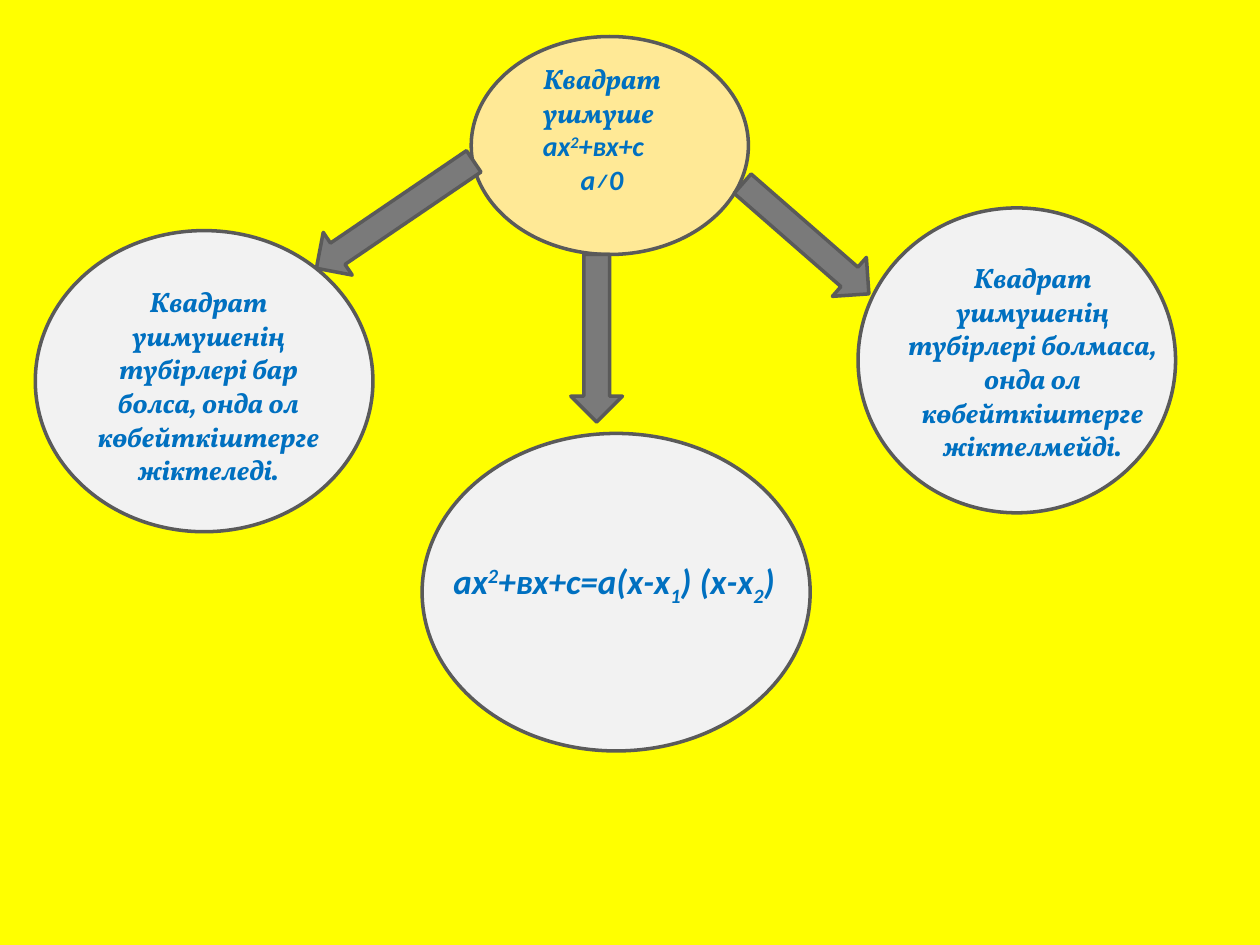
from dataclasses import dataclass

from pptx import Presentation, util as u
from pptx.dml.color import RGBColor
from pptx.enum import shapes, text


@dataclass(frozen=True)
class Theme:
    background: str = "FFFF00"
    topic: str = "FFE996"
    answer: str = "F2F2F2"
    arrow: str = "7A7A7A"
    outline: str = "5A5A5A"
    ink: str = "0070C0"
    words: str = "Vollkorn"
    formula: str = "Calibri"
    body: int = 16
    large: int = 20
    outline_width: int = 2


THEME = Theme()
OVAL = shapes.MSO_SHAPE.OVAL
ARROW = shapes.MSO_SHAPE.RIGHT_ARROW
SUP, SUB = 30, -25  # baseline shift in percent

# Diagram, back to front: kind, (left, top, width, height), fill, rotation
DIAGRAM = [
    (OVAL, (3.74, 0.29, 2.2, 1.73), THEME.topic, 0),
    (ARROW, (2.38, 1.5, 1.51, 0.41), THEME.arrow, 145.8),
    (OVAL, (0.28, 1.83, 2.68, 2.39), THEME.answer, 0),
    (OVAL, (6.81, 1.65, 2.52, 2.42), THEME.answer, 0),
    (ARROW, (5.73, 1.69, 1.33, 0.41), THEME.arrow, 41.1),
    (OVAL, (3.35, 3.44, 3.08, 2.52), THEME.answer, 0),
    (ARROW, (4.07, 2.48, 1.33, 0.41), THEME.arrow, 90),
]

# Labels: position, paragraphs of (font, runs, indent), format.
# A run is (wording, baseline shift).
LABELS = [
    ((4.21, 0.44, 1.34, 1.78), [
        (THEME.words, [("Квадрат үшмүше", 0)], 0),
        (THEME.formula, [("ах", 0), ("2", SUP), ("+вх+с", 0)], 0),
        (THEME.formula, [("а≠0", 0)], 0.3),
    ], {}),
    ((0.67, 1.94, 1.97, 1.99), [
        (THEME.words, [("Квадрат үшмүшенің түбірлері бар болса, онда ол "
                        "көбейткіштерге жіктеледі.", 0)], 0),
    ], {"centred": True, "inset_top": 0.32}),
    ((7.06, 2.02, 2.27, 1.72), [
        (THEME.words, [("Квадрат үшмүшенің түбірлері болмаса, онда ол "
                        "көбейткіштерге жіктелмейді.", 0)], 0),
    ], {"centred": True}),
    ((3.5, 4.06, 3.07, 0.77), [
        (THEME.formula, [("ах", 0), ("2", SUP), ("+вх+с=а(х-х", 0), ("1", SUB),
                         (") (х-х", 0), ("2", SUB), (")", 0)], 0),
    ], {"size": THEME.large, "inset_top": 0.38}),
]


def rgb(value):
    return RGBColor.from_string(value)


def add_figure(page, kind, place, fill, rotation):
    figure = page.shapes.add_shape(kind, *map(u.Inches, place))
    figure.shadow.inherit = False
    figure.rotation = rotation
    figure.fill.solid()
    figure.fill.fore_color.rgb = rgb(fill)
    figure.line.color.rgb = rgb(THEME.outline)
    figure.line.width = u.Pt(THEME.outline_width)


def add_label(page, place, paragraphs, *, size=THEME.body, centred=False,
              inset_top=0.05):
    box = page.shapes.add_textbox(*map(u.Inches, place))
    frame = box.text_frame
    frame.word_wrap = True
    frame.auto_size = text.MSO_AUTO_SIZE.SHAPE_TO_FIT_TEXT
    frame.margin_top = u.Inches(inset_top)
    for index, (font, runs, indent) in enumerate(paragraphs):
        para = frame.add_paragraph() if index else frame.paragraphs[0]
        para.alignment = text.PP_ALIGN.CENTER if centred else text.PP_ALIGN.LEFT
        if indent:
            para._p.get_or_add_pPr().set("marL", str(u.Inches(indent)))
        for wording, shift in runs:
            span = para.add_run()
            span.text = wording
            span.font.name = font
            span.font.size = u.Pt(size)
            span.font.bold = span.font.italic = True
            span.font.color.rgb = rgb(THEME.ink)
            if shift:
                span._r.get_or_add_rPr().set("baseline", str(shift * 1000))


def main():
    deck = Presentation()
    deck.slide_width, deck.slide_height = u.Inches(10), u.Inches(7.5)
    page = deck.slides.add_slide(deck.slide_layouts[6])
    page.background.fill.solid()
    page.background.fill.fore_color.rgb = rgb(THEME.background)

    # Ovals and the arrows between them
    for figure in DIAGRAM:
        add_figure(page, *figure)

    # Wording over the ovals
    for place, paragraphs, style in LABELS:
        add_label(page, place, paragraphs, **style)

    deck.save("out.pptx")


if __name__ == "__main__":
    main()
